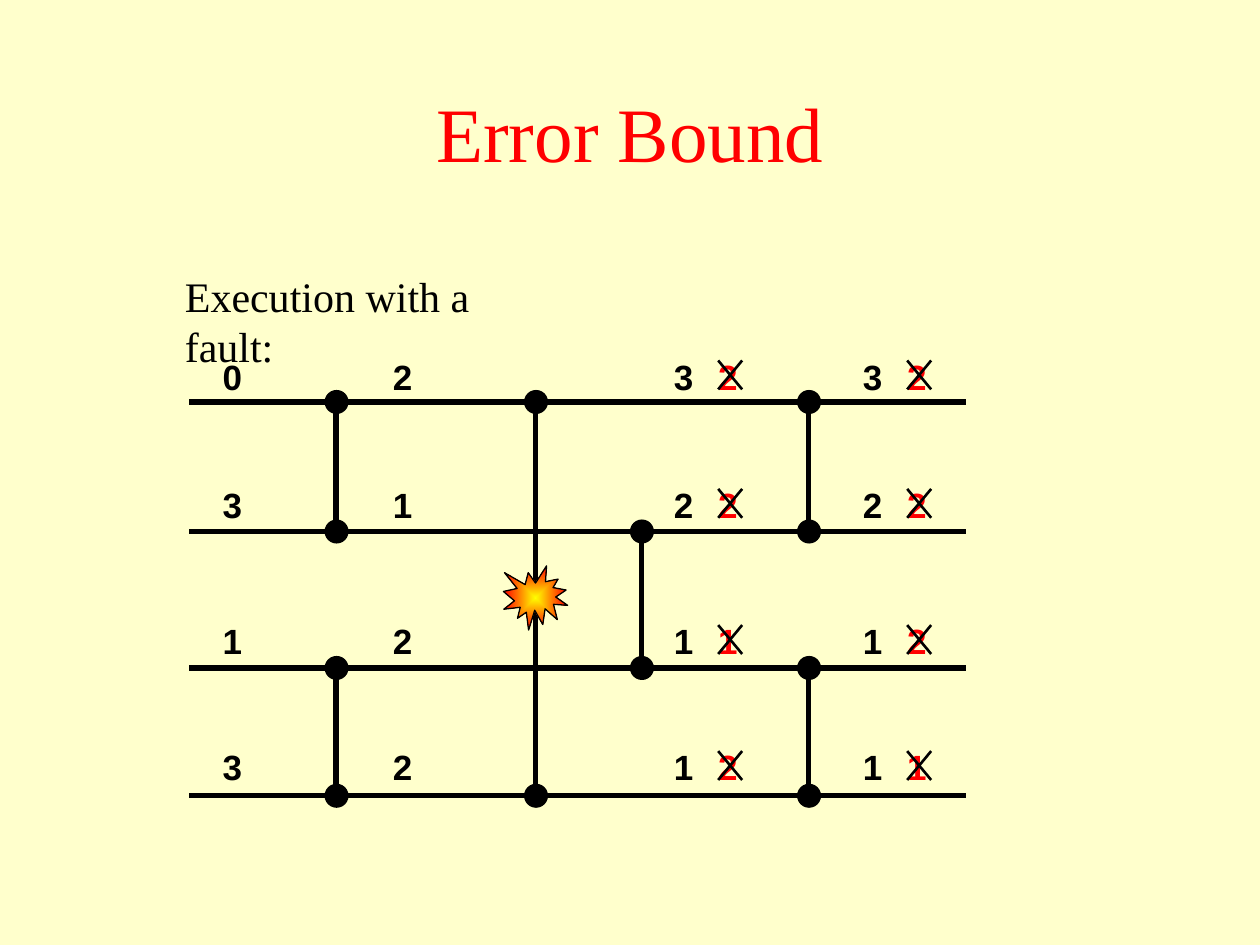
import pptx
import pptx.dml.color
import pptx.enum.shapes
import pptx.enum.text
import pptx.oxml
import pptx.oxml.ns
import pptx.util
import lxml.etree

Pt = pptx.util.Pt
Shape = pptx.enum.shapes.MSO_SHAPE
Align = pptx.enum.text.PP_ALIGN
Anchor = pptx.enum.text.MSO_ANCHOR
qn = pptx.oxml.ns.qn

HUES = {"ground": "FFFFCC", "ink": "000000", "red": "FF0000", "glow": "FFFF00"}
FONTS = {
    "title": {"name": "Times New Roman", "size": Pt(44), "bold": False},
    "note": {"name": "Times New Roman", "size": Pt(24), "bold": False},
    "value": {"name": "Arial", "size": Pt(20), "bold": True},
}

# Wire heights and label tops, relative to the top wire
WIRES = [0, 74, 152, 225]
LABELS = [-30.2, 43.2, 121, 193]
# Columns of values: left edge, colour, struck out, one value per wire
VALUES = [
    (12.2, "ink", False, "0313"),
    (109.4, "ink", False, "2122"),
    (270, "ink", False, "3211"),
    (295.2, "red", True, "2212"),
    (378, "ink", False, "3211"),
    (403.2, "red", True, "2221"),
]
# Gates: horizontal place, first wire, last wire
GATES = [(84, 0, 1), (84, 2, 3), (198, 0, 3), (258.5, 1, 2), (354, 0, 1), (354, 2, 3)]
DOT = 13
BURST = 36.7


def tint(hue):
    return pptx.dml.color.RGBColor.from_string(HUES[hue])


def write(frame, text, style, hue):
    par = frame.paragraphs[0]
    run = par.add_run()
    run.text = text
    for key, val in FONTS[style].items():
        setattr(run.font, key, val)
    run.font.color.rgb = tint(hue)
    return par


def add_text(slide, box, text, style, hue, wrap):
    frame = slide.shapes.add_textbox(*map(Pt, box)).text_frame
    frame.word_wrap = wrap
    write(frame, text, style, hue)


def add_line(slide, x1, y1, x2, y2, width):
    kind = pptx.enum.shapes.MSO_CONNECTOR.STRAIGHT
    line = slide.shapes.add_connector(kind, *map(Pt, (x1, y1, x2, y2)))
    line.line.width = Pt(width)
    line.line.color.rgb = tint("ink")
    lxml.etree.SubElement(line._element.spPr, qn("a:effectLst"))


def add_mark(slide, kind, x, y, size):
    """Place a black-edged shape centred on a point."""
    box = (x - size / 2, y - size / 2, size, size)
    mark = slide.shapes.add_shape(kind, *map(Pt, box))
    mark.shadow.inherit = False
    mark.fill.solid()
    mark.fill.fore_color.rgb = tint("ink")
    mark.line.color.rgb = tint("ink")
    mark.line.width = Pt(0.75)
    return mark


def add_burst(slide, x, y):
    burst = add_mark(slide, Shape.EXPLOSION1, x, y, BURST)
    burst.fill.gradient()
    for stop, (hue, place) in zip(burst.fill.gradient_stops, [("glow", 0), ("red", 1)]):
        stop.color.rgb = tint(hue)
        stop.position = place
    # Make the gradient spread from the centre
    grad = burst._element.spPr.find(qn("a:gradFill"))
    old = grad.find(qn("a:lin"))
    if old is not None:
        grad.remove(old)
    spread = lxml.etree.SubElement(grad, qn("a:path"), {"path": "shape"})
    edges = {side: "50000" for side in "ltrb"}
    lxml.etree.SubElement(spread, qn("a:fillToRect"), edges)


def add_title(slide, box):
    title = slide.shapes.title
    for key, val in zip(("left", "top", "width", "height"), box):
        setattr(title, key, Pt(val))
    title.text_frame.vertical_anchor = Anchor.MIDDLE
    write(title.text_frame, "Error Bound", "title", "red").alignment = Align.CENTER


def add_net(slide, box):
    left, top, width, _ = box
    # Wires
    for y in WIRES:
        add_line(slide, left, top + y, left + width, top + y, 3)
    # Gates with a dot at each end
    for x, first, last in GATES:
        ends = [top + WIRES[first], top + WIRES[last]]
        add_line(slide, left + x, ends[0], left + x, ends[1], 3)
        for y in ends:
            add_mark(slide, Shape.OVAL, left + x + 0.3, y, DOT)
    # Values, with the faulty ones struck out
    for x, hue, struck, vals in VALUES:
        for y, val in zip(LABELS, vals):
            x1, y1 = left + x, top + y
            add_text(slide, (x1, y1, 26, 31), val, "value", hue, False)
            if struck:
                x1, x2, y1, y2 = x1 + 7.2, x1 + 20.9, y1 + 6.5, y1 + 23
                add_line(slide, x1, y2, x2, y1, 1.5)
                add_line(slide, x2, y2, x1, y1, 1.5)
    # Fault on the long gate
    add_burst(slide, left + GATES[2][0], top + 112)


def main():
    deck = pptx.Presentation()
    deck.slide_width, deck.slide_height = Pt(720), Pt(540)
    slide = deck.slides.add_slide(deck.slide_layouts[5])
    slide.background.fill.solid()
    slide.background.fill.fore_color.rgb = tint("ground")
    add_title(slide, (54, 30, 612, 90))
    add_net(slide, (108, 229.7, 444, 225))
    add_text(slide, (98.6, 151, 230, 36), "Execution with a fault:", "note", "ink", True)
    deck.save("out.pptx")


if __name__ == "__main__":
    main()
